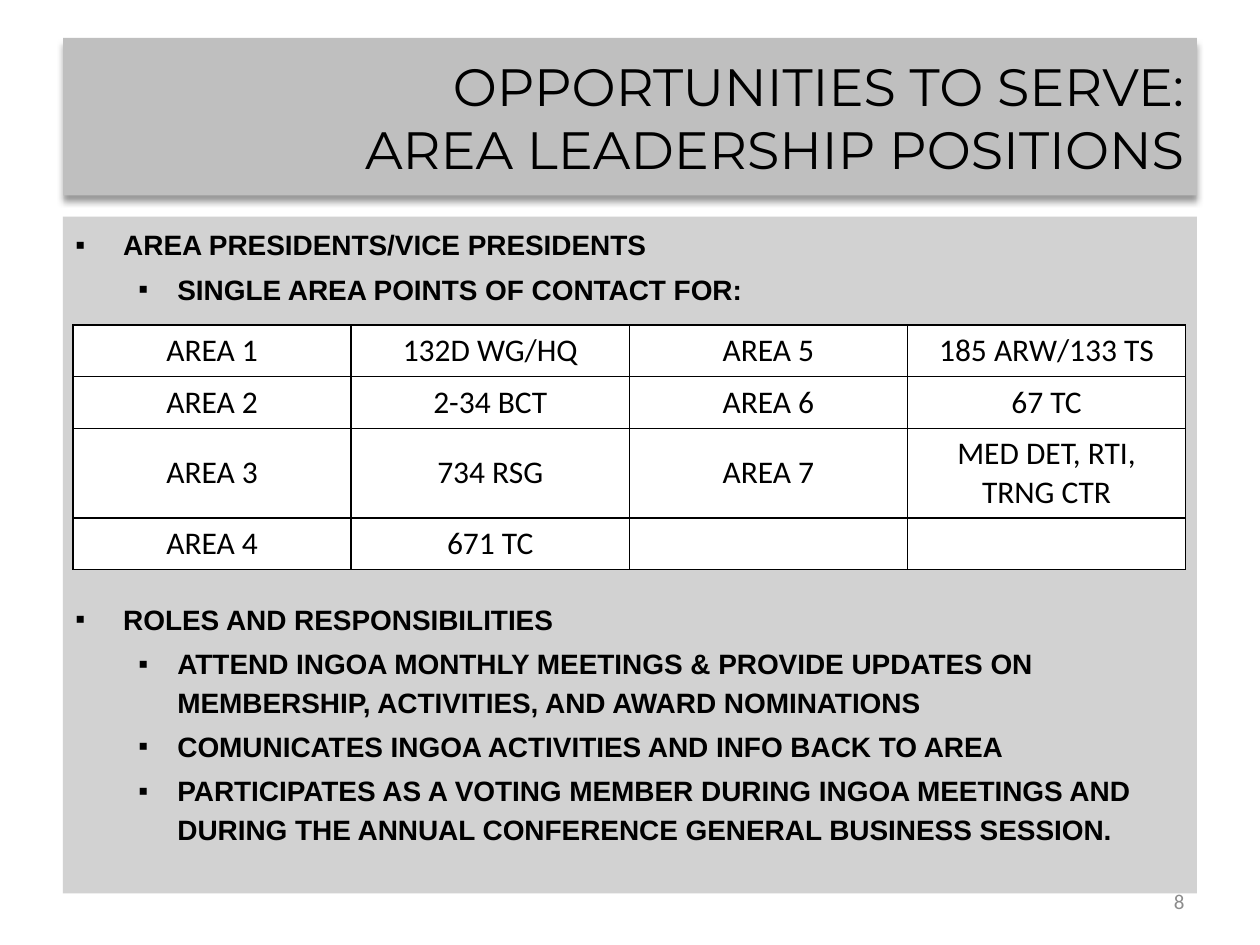
from dataclasses import dataclass

from lxml.etree import SubElement
from pptx import Presentation
from pptx.dml.color import RGBColor
from pptx.enum.text import MSO_ANCHOR, MSO_AUTO_SIZE, PP_ALIGN
from pptx.oxml import parse_xml
from pptx.oxml.ns import nsdecls, qn
from pptx.util import Inches, Pt


@dataclass(frozen=True)
class Theme:
    """Colours, fonts and type sizes of the slide."""
    ink: str = "000000"
    panel: str = "BFBFBF"
    cell: str = "FFFFFF"
    muted: str = "8C8C8C"
    panel_opacity: int = 70
    title_font: str = "Montserrat"
    body_font: str = "Arial"
    table_font: str = "Calibri"
    title_size: int = 30
    body_size: int = 16
    table_size: int = 18
    number_size: int = 12


THEME = Theme()
TABLE_GAP = 166.8
BULLET_INDENTS = [(0.38, -0.38), (0.81, -0.31)]
DUTIES = [
    (0, "AREA PRESIDENTS/VICE PRESIDENTS", 0),
    (1, "SINGLE AREA POINTS OF CONTACT FOR:", 3.2),
    (0, "ROLES AND RESPONSIBILITIES", TABLE_GAP),
    (1, "ATTEND INGOA MONTHLY MEETINGS & PROVIDE UPDATES ON "
        "MEMBERSHIP, ACTIVITIES, AND AWARD NOMINATIONS", 3.2),
    (1, "COMUNICATES INGOA ACTIVITIES AND INFO BACK TO AREA", 3.2),
    (1, "PARTICIPATES AS A VOTING MEMBER DURING INGOA MEETINGS AND "
        "DURING THE ANNUAL CONFERENCE GENERAL BUSINESS SESSION.", 3.2),
]
AREAS = [
    ["AREA 1", "132D WG/HQ", "AREA 5", "185 ARW/133 TS"],
    ["AREA 2", "2-34 BCT", "AREA 6", "67 TC"],
    ["AREA 3", "734 RSG", "AREA 7", "MED DET, RTI, TRNG CTR"],
    ["AREA 4", "671 TC", "", ""],
]
ROW_HEIGHTS = [0.41, 0.41, 0.71, 0.41]


def write_text(paragraph, text, *, font, size, color=THEME.ink, bold=False,
               align=PP_ALIGN.LEFT):
    """Write formatted text into a paragraph."""
    paragraph.text = text
    paragraph.alignment = align
    for run in paragraph.runs:
        run.font.name = font
        run.font.size = Pt(size)
        run.font.bold = bold
        run.font.color.rgb = RGBColor.from_string(color)


def fill_solid(target, color):
    """Give a shape or cell a plain fill."""
    target.fill.solid()
    target.fill.fore_color.rgb = RGBColor.from_string(color)


def add_bullet(paragraph, level):
    """Give a paragraph a square bullet with the indent of its level."""
    margin, indent = BULLET_INDENTS[level]
    paragraph.level = level
    properties = paragraph._p.get_or_add_pPr()
    properties.set("marL", str(Inches(margin)))
    properties.set("indent", str(Inches(indent)))
    SubElement(properties, qn("a:buFont"), typeface="Arial")
    SubElement(properties, qn("a:buChar"), char="▪")


def place_title(slide, left, top, width, height):
    """Place the title banner with its soft shadow."""
    title = slide.shapes.title
    title.left, title.top, title.width, title.height = left, top, width, height
    fill_solid(title, THEME.panel)
    title._element.spPr.append(parse_xml(
        f'<a:effectLst {nsdecls("a")}><a:outerShdw blurRad="{Pt(4)}" '
        f'dist="{Pt(3)}" dir="5400000" rotWithShape="0"><a:srgbClr val="{THEME.ink}">'
        '<a:alpha val="40000"/></a:srgbClr></a:outerShdw></a:effectLst>'))
    frame = title.text_frame
    frame.word_wrap = True
    frame.auto_size = MSO_AUTO_SIZE.NONE
    frame.vertical_anchor = MSO_ANCHOR.MIDDLE
    write_text(frame.paragraphs[0],
               "OPPORTUNITIES TO SERVE:\vAREA LEADERSHIP POSITIONS",
               font=THEME.title_font, size=THEME.title_size, align=PP_ALIGN.RIGHT)


def place_duties(slide, left, top, width, height):
    """Place the translucent panel of bullets, leaving room for the table."""
    panel = slide.shapes.add_textbox(left, top, width, height)
    fill_solid(panel, THEME.panel)
    color = panel._element.spPr.find(".//" + qn("a:srgbClr"))
    SubElement(color, qn("a:alpha"), val=str(THEME.panel_opacity * 1000))
    frame = panel.text_frame
    frame.word_wrap = True
    for index, (level, text, space) in enumerate(DUTIES):
        paragraph = frame.add_paragraph() if index else frame.paragraphs[0]
        add_bullet(paragraph, level)
        paragraph.line_spacing = 1.15
        paragraph.space_before = Pt(space)
        write_text(paragraph, text, font=THEME.body_font, size=THEME.body_size, bold=True)


def add_borders(cell):
    """Draw a thin line on every side of a cell."""
    properties = cell._tc.get_or_add_tcPr()
    for index, side in enumerate(("lnL", "lnR", "lnT", "lnB")):
        properties.insert(index, parse_xml(
            f'<a:{side} {nsdecls("a")} w="{Pt(1)}"><a:solidFill>'
            f'<a:srgbClr val="{THEME.ink}"/></a:solidFill></a:{side}>'))


def place_areas(slide, left, top, width):
    """Place the table of areas and units in equal columns."""
    columns = len(AREAS[0])
    height = Inches(sum(ROW_HEIGHTS))
    table = slide.shapes.add_table(len(AREAS), columns, left, top, width, height).table
    table.first_row = False
    table.horz_banding = False
    for row, row_height, texts in zip(table.rows, ROW_HEIGHTS, AREAS):
        row.height = Inches(row_height)
        for cell, text in zip(row.cells, texts):
            fill_solid(cell, THEME.cell)
            add_borders(cell)
            cell.vertical_anchor = MSO_ANCHOR.MIDDLE
            write_text(cell.text_frame.paragraphs[0], text, font=THEME.table_font,
                       size=THEME.table_size, align=PP_ALIGN.CENTER)


def place_number(slide, left, top, width, height):
    """Place the slide number."""
    frame = slide.shapes.add_textbox(left, top, width, height).text_frame
    frame.word_wrap = True
    frame.vertical_anchor = MSO_ANCHOR.MIDDLE
    write_text(frame.paragraphs[0], "8", font=THEME.table_font,
               size=THEME.number_size, color=THEME.muted, align=PP_ALIGN.RIGHT)


def main():
    """Build and save the slide."""
    presentation = Presentation()
    presentation.slide_width, presentation.slide_height = Inches(10), Inches(7.5)
    slide = presentation.slides.add_slide(presentation.slide_layouts.get_by_name("Title Only"))
    left, width = Inches(0.5), Inches(9)
    place_duties(slide, left, Inches(1.72), width, Inches(5.37))
    place_title(slide, left, Inches(0.3), width, Inches(1.25))
    place_number(slide, Inches(7.17), Inches(6.95), Inches(2.33), Inches(0.4))
    place_areas(slide, Inches(0.58), Inches(2.58), Inches(8.83))
    presentation.save("out.pptx")


if __name__ == "__main__":
    main()
